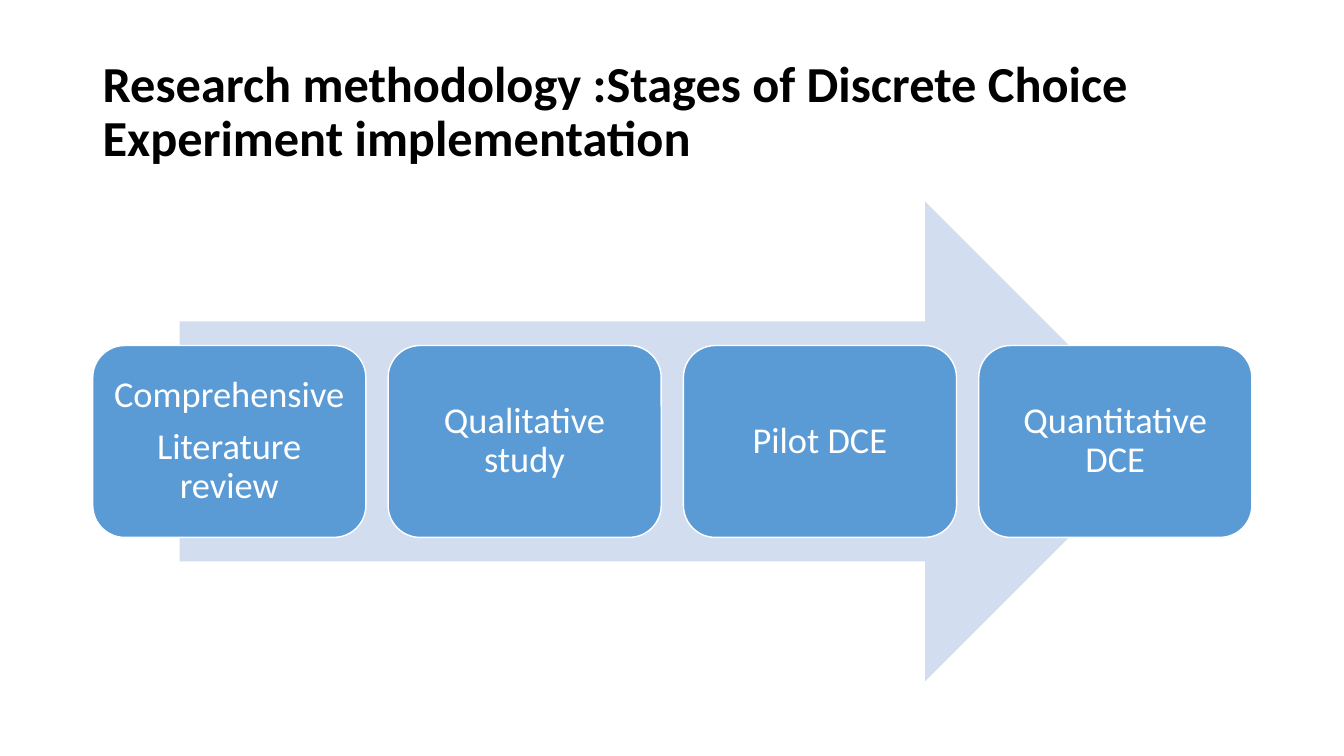
import pptx
import pptx.util
import pptx.dml.color
import pptx.enum.shapes
import pptx.enum.text

Pt = pptx.util.Pt
RGB = pptx.dml.color.RGBColor.from_string
SHAPES = pptx.enum.shapes.MSO_SHAPE
ALIGN = pptx.enum.text.PP_ALIGN

TITLE = "Research methodology :Stages of Discrete Choice Experiment implementation"
STAGES = [
    ["Comprehensive", "Literature review"],
    ["Qualitative study"],
    ["Pilot DCE"],
    ["Quantitative DCE"],
]

THEME = {
    "font": "Calibri",
    "title_size": 36,
    "stage_size": 26,
    "title": "000000",
    "arrow": "D2DEEF",
    "stage": "5B9BD5",
    "light": "FFFFFF",
}

SLIDE_W, SLIDE_H = 960, 540
MARGIN, CONTENT_W = 66.24, 828
TITLE_TOP, TITLE_H = 28.8, 104.4
ARROW_TOP, ARROW_H = 144, 342.72
ARROW_W = CONTENT_W * 0.85
STAGE_W, STAGE_H = 195.12, 137.09
STAGE_INSET = 7.92
PARAGRAPH_GAP = 9.1


def write(shape, lines, size, color, align, bold=False):
    tf = shape.text_frame
    tf.word_wrap = True
    tf.vertical_anchor = pptx.enum.text.MSO_ANCHOR.MIDDLE
    tf.text = "\n".join(lines)
    for p in tf.paragraphs:
        p.alignment = align
        p.line_spacing = 0.9
        font = p.runs[0].font
        font.name = THEME["font"]
        font.size = Pt(size)
        font.bold = bold
        font.color.rgb = RGB(color)
    for p in tf.paragraphs[:-1]:
        p.space_after = Pt(PARAGRAPH_GAP)
    return tf


def add_block(s, kind, left, top, width, height, fill):
    sp = s.shapes.add_shape(kind, Pt(left), Pt(top), Pt(width), Pt(height))
    sp.shadow.inherit = False
    sp.fill.solid()
    sp.fill.fore_color.rgb = RGB(fill)
    sp.line.fill.background()
    return sp


def add_stage(s, left, top, lines):
    sp = add_block(s, SHAPES.ROUNDED_RECTANGLE, left, top, STAGE_W, STAGE_H, THEME["stage"])
    sp.line.color.rgb = RGB(THEME["light"])
    sp.line.width = Pt(1)
    tf = write(sp, lines, THEME["stage_size"], THEME["light"], ALIGN.CENTER)
    tf.margin_left = tf.margin_right = Pt(STAGE_INSET)
    tf.margin_top = tf.margin_bottom = Pt(STAGE_INSET)


def main():
    prs = pptx.Presentation()
    prs.slide_width, prs.slide_height = Pt(SLIDE_W), Pt(SLIDE_H)
    s = prs.slides.add_slide(prs.slide_layouts[6])

    title = s.shapes.add_textbox(Pt(MARGIN), Pt(TITLE_TOP), Pt(CONTENT_W), Pt(TITLE_H))
    write(title, [TITLE], THEME["title_size"], THEME["title"], ALIGN.LEFT, bold=True)

    arrow_left = MARGIN + (CONTENT_W - ARROW_W) / 2
    add_block(s, SHAPES.RIGHT_ARROW, arrow_left, ARROW_TOP, ARROW_W, ARROW_H, THEME["arrow"])

    pitch = (CONTENT_W - STAGE_W) / (len(STAGES) - 1)
    stage_top = ARROW_TOP + (ARROW_H - STAGE_H) / 2
    for i, lines in enumerate(STAGES):
        add_stage(s, MARGIN + i * pitch, stage_top, lines)

    prs.save("out.pptx")


if __name__ == "__main__":
    main()
